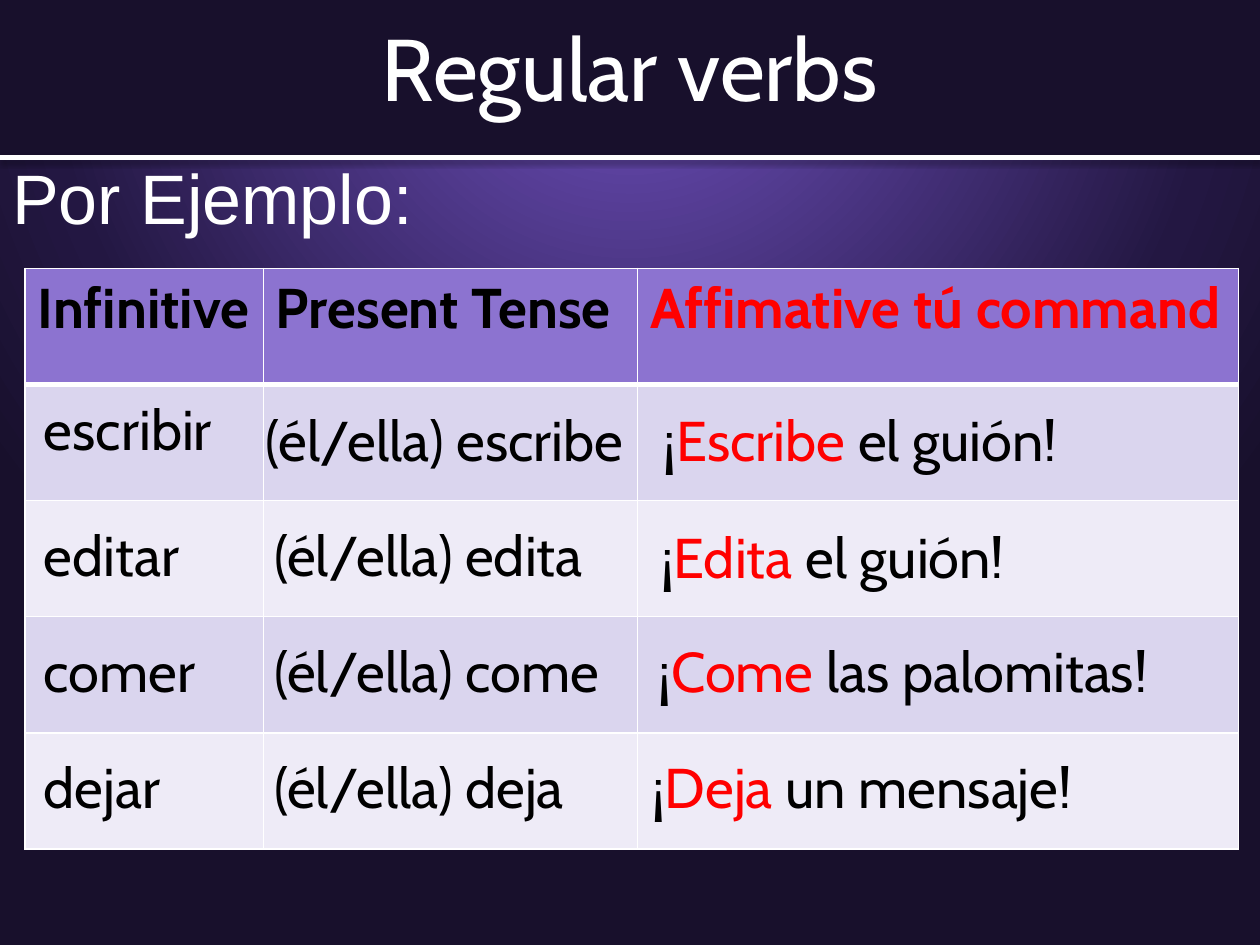
from pptx import Presentation
from pptx.dml.color import RGBColor
from pptx.enum.shapes import MSO_CONNECTOR, MSO_SHAPE
from pptx.enum.text import MSO_ANCHOR, MSO_AUTO_SIZE, PP_ALIGN
from pptx.oxml import parse_xml
from pptx.oxml.ns import qn
from pptx.util import Inches, Pt

NAMESPACE = 'xmlns:a="http://schemas.openxmlformats.org/drawingml/2006/main"'
DARK, WHITE, BLACK, RED = "18102C", "FFFFFF", "000000", "FF0000"
HEADER_FILL, BAND_FILLS = "8C73D0", ("DAD5EE", "EEEBF7")
COLUMN_WIDTHS = (1.89, 2.97, 4.77)
HEADINGS = (("Infinitive", BLACK), ("Present Tense", BLACK), ("Affimative tú command", RED))
VERBS = (
    ("escribir", "escribe", "Escribe", " el guión!"),
    ("editar", "edita", "Edita", " el guión!"),
    ("comer", "come", "Come", " las palomitas!"),
    ("dejar", "deja", "Deja", " un mensaje!"),
)
VERB_PLACES = (
    ((0.25, 3.08, 1.79), (2.01, 3.17, 3.21), (5.17, 3.17, 4.33)),
    ((0.25, 4.08, 1.79), (2.08, 4.08, 2.9), (5.15, 4.1, 4.1)),
    ((0.25, 5, 1.6), (2.08, 5, 3), (5.13, 5, 4.71)),
    ((0.25, 5.92, 1.47), (2.08, 5.92, 3.21), (5.08, 5.92, 4.27)),
)


def rgb(value):
    """Turn a hex string into a colour."""
    return RGBColor.from_string(value)


def style_font(font, size, name, color=None, bold=None):
    """Set the look of a font."""
    font.size, font.name, font.bold = Pt(size), name, bold
    if color:
        font.color.rgb = rgb(color)


def add_text(slide, box, parts, size, name):
    """Add a wrapped text box of (text, colour) parts and return its frame."""
    frame = slide.shapes.add_textbox(*map(Inches, box)).text_frame
    frame.word_wrap = True
    paragraph = frame.paragraphs[0]
    shared = parts[0][1] if len(parts) == 1 else None
    style_font(paragraph.font, size, name, shared)
    for text, color in parts:
        run = paragraph.add_run()
        run.text = text
        if not shared:
            run.font.color.rgb = rgb(color)
    return frame


def paint_background(slide):
    """Fill the slide with a purple glow from above its top edge."""
    slide.background.fill.gradient()
    gradient = slide.element.find(".//" + qn("a:gradFill"))
    stops = "".join(
        f'<a:gs pos="{position * 1000}"><a:srgbClr val="{color}"/></a:gs>'
        for position, color in ((0, "7152C2"), (75, "231742"), (100, DARK))
    )
    gradient.getparent().replace(gradient, parse_xml(
        f'<a:gradFill {NAMESPACE} rotWithShape="1"><a:gsLst>{stops}</a:gsLst>'
        '<a:path path="circle"><a:fillToRect l="50000" t="-80000" r="50000" b="180000"/>'
        "</a:path></a:gradFill>"
    ))


def add_band(slide, left, top, width, height):
    """Add the dark band behind the title."""
    band = slide.shapes.add_shape(
        MSO_SHAPE.RECTANGLE, *map(Inches, (left, top, width, height)))
    band.shadow.inherit = False
    band.fill.solid()
    band.fill.fore_color.rgb = rgb(DARK)
    band.line.fill.background()


def add_title(slide, left, top, width, height):
    """Add the centred title."""
    frame = add_text(slide, (left, top, width, height),
                     [("Regular verbs", WHITE)], 50, "Cabin")
    frame.vertical_anchor = MSO_ANCHOR.MIDDLE
    frame.paragraphs[0].alignment = PP_ALIGN.CENTER


def add_rule(slide, left, top, width):
    """Add the white rule with its soft shadow."""
    rule = slide.shapes.add_connector(
        MSO_CONNECTOR.STRAIGHT, *map(Inches, (left, top, left + width, top)))
    rule.line.color.rgb = rgb(WHITE)
    rule.line.width = Pt(3)
    rule.element.spPr.append(parse_xml(
        f'<a:effectLst {NAMESPACE}><a:outerShdw blurRad="{Pt(3.1)}" dist="{Pt(1.6)}" '
        f'dir="5400000" rotWithShape="0"><a:srgbClr val="{BLACK}"><a:alpha val="38000"/>'
        "</a:srgbClr></a:outerShdw></a:effectLst>"
    ))


def add_borders(cell, **widths):
    """Draw white borders of the given point widths before the cell's fill."""
    properties = cell._tc.get_or_add_tcPr()
    for index, (side, width) in enumerate(widths.items()):
        properties.insert(index, parse_xml(
            f'<a:{side} {NAMESPACE} w="{Pt(width)}"><a:solidFill>'
            f'<a:srgbClr val="{WHITE}"/></a:solidFill></a:{side}>'
        ))


def add_verb_table(slide, left, top, width, height):
    """Add the banded table with its headings."""
    table = slide.shapes.add_table(
        len(VERBS) + 1, len(HEADINGS), *map(Inches, (left, top, width, height))).table
    for column, column_width in zip(table.columns, COLUMN_WIDTHS):
        column.width = Inches(column_width)
    for row_index, row in enumerate(table.rows):
        row.height = Inches(height / len(table.rows))
        for cell in row.cells:
            cell.fill.solid()
            cell.fill.fore_color.rgb = rgb(
                BAND_FILLS[(row_index - 1) % 2] if row_index else HEADER_FILL)
            add_borders(cell, lnL=1, lnR=1, lnT=3 if row_index == 1 else 1,
                        lnB=1 if row_index else 3)
    for cell, (heading, color) in zip(table.rows[0].cells, HEADINGS):
        cell.text = heading
        cell.margin_right = Inches(0.02)
        style_font(cell.text_frame.paragraphs[0].font, 32, "Cabin", color, True)


def add_verb_row(slide, places, verb):
    """Add one verb's infinitive, present tense and command."""
    infinitive, present, command, ending = verb
    phrases = (
        [(infinitive, BLACK)],
        [(f"(él/ella) {present}", BLACK)],
        [("¡", BLACK), (command, RED), (ending, BLACK)],
    )
    for place, phrase in zip(places, phrases):
        frame = add_text(slide, (*place, 0.64), phrase, 32, "Cabin")
        frame.auto_size = MSO_AUTO_SIZE.SHAPE_TO_FIT_TEXT


def main():
    """Build and save the slide."""
    presentation = Presentation()
    presentation.slide_width, presentation.slide_height = Inches(10), Inches(7.5)
    slide = presentation.slides.add_slide(presentation.slide_layouts[6])
    paint_background(slide)
    add_band(slide, 0, 0, 10, 1.25)
    add_title(slide, 0, 0, 10, 1.06)
    example = add_text(slide, (0, 1.25, 10, 6.25), [("Por Ejemplo:", WHITE)], 40, "Arial")
    example.paragraphs[0].line_spacing = 0.9
    add_rule(slide, 0, 1.25, 10)
    add_verb_table(slide, 0.2, 2.13, sum(COLUMN_WIDTHS), 4.61)
    for places, verb in zip(VERB_PLACES, VERBS):
        add_verb_row(slide, places, verb)
    presentation.save("out.pptx")


if __name__ == "__main__":
    main()
